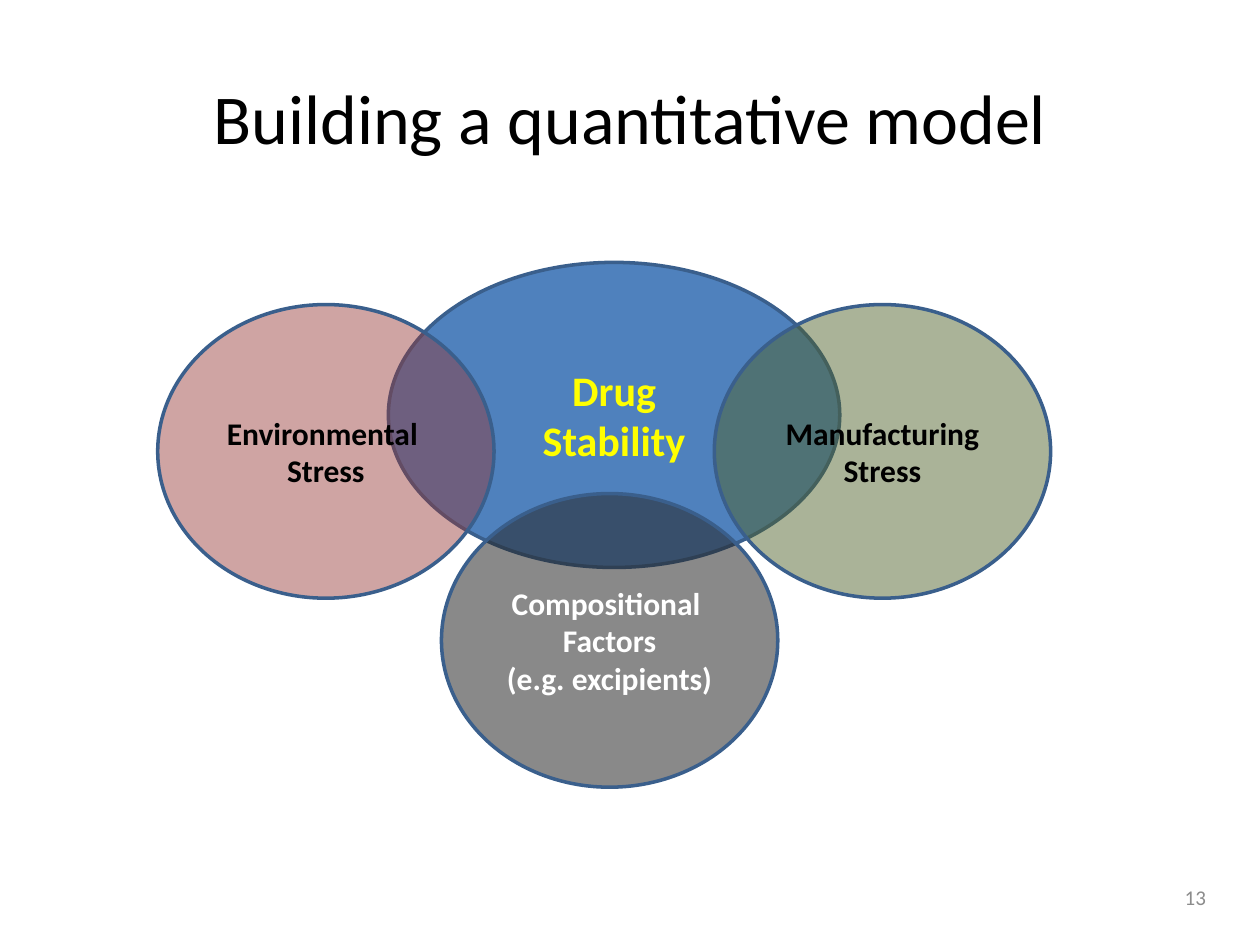
from lxml import etree
from pptx import Presentation
from pptx.dml.color import RGBColor
from pptx.enum.shapes import MSO_SHAPE
from pptx.enum.text import MSO_ANCHOR, PP_ALIGN
from pptx.oxml.ns import qn
from pptx.util import Cm, Pt

OVAL = MSO_SHAPE.OVAL
MIDDLE = MSO_ANCHOR.MIDDLE
CENTER, RIGHT = PP_ALIGN.CENTER, PP_ALIGN.RIGHT
TITLE_ONLY = 5
FONT = "Calibri"
COLORS = {
    "black": "000000",
    "white": "FFFFFF",
    "yellow": "FFFF00",
    "page": "8C8C8C",
    "outline": "3A5F8C",
    "stability": "4F81BD",
    "composition": "262626",
    "environment": "953735",
    "manufacturing": "4F6228",
}


def color(name):
    return RGBColor.from_string(COLORS[name])


def write_lines(shape, lines, size, text_color, align=CENTER, bold=False):
    frame = shape.text_frame
    frame.word_wrap = True
    frame.vertical_anchor = MIDDLE
    frame.text = "\n".join(lines)
    for paragraph in frame.paragraphs:
        paragraph.alignment = align
        font = paragraph.font
        font.name, font.size, font.bold = FONT, Pt(size), bold
        font.color.rgb = color(text_color)


def add_factor(group, box, fill, opacity, lines, size, text_color):
    """Add one ellipse of the diagram; opacity is in percent."""
    ellipse = group.shapes.add_shape(OVAL, *box)
    ellipse.shadow.inherit = False
    ellipse.fill.solid()
    ellipse.fill.fore_color.rgb = color(fill)
    if opacity < 100:
        rgb = ellipse.fill._xPr.find(qn("a:solidFill"))[0]
        etree.SubElement(rgb, qn("a:alpha"), val=str(opacity * 1000))
    ellipse.line.color.rgb = color("outline")
    ellipse.line.width = Pt(2)
    write_lines(ellipse, lines, size, text_color, bold=True)


def add_stability_model(slide, left, top, width, height):
    """Drug stability in the centre, overlapped by three factors at the edges."""
    group = slide.shapes.add_group_shape()
    core_w, core_h = Cm(9.1), Cm(6.15)
    factor_w, factor_h = Cm(6.78), Cm(5.92)
    side_top = top + Cm(0.85)

    add_factor(group, (left + Cm(4.65), top, core_w, core_h),
               "stability", 100, ["Drug", "Stability"], 24, "yellow")
    factors = [
        (left + Cm(5.72), top + height - factor_h, "composition", 54,
         ["Compositional ", "Factors", "(e.g. excipients)"], "white"),
        (left, side_top, "environment", 45,
         ["Environmental ", "Stress"], "black"),
        (left + width - factor_w, side_top, "manufacturing", 48,
         ["Manufacturing", "Stress"], "black"),
    ]
    for x, y, fill, opacity, lines, text_color in factors:
        add_factor(group, (x, y, factor_w, factor_h),
                   fill, opacity, lines, 18, text_color)


def add_title(slide, left, top, width, height):
    title = slide.shapes.title
    title.left, title.top, title.width, title.height = left, top, width, height
    write_lines(title, ["Building a quantitative model"], 40, "black")


def add_page_number(slide, left, top, width, height):
    number = slide.shapes.add_textbox(left, top, width, height)
    write_lines(number, ["13"], 12, "page", RIGHT)


def main():
    prs = Presentation()
    prs.slide_width, prs.slide_height = Cm(25.4), Cm(19.05)
    slide = prs.slides.add_slide(prs.slide_layouts[TITLE_ONLY])
    add_title(slide, Cm(1.27), Cm(0.76), Cm(22.86), Cm(3.18))
    add_page_number(slide, Cm(18.63), Cm(17.58), Cm(5.93), Cm(1.01))
    add_stability_model(slide, Cm(3.18), Cm(5.29), Cm(18), Cm(10.58))
    prs.save("out.pptx")


if __name__ == "__main__":
    main()
